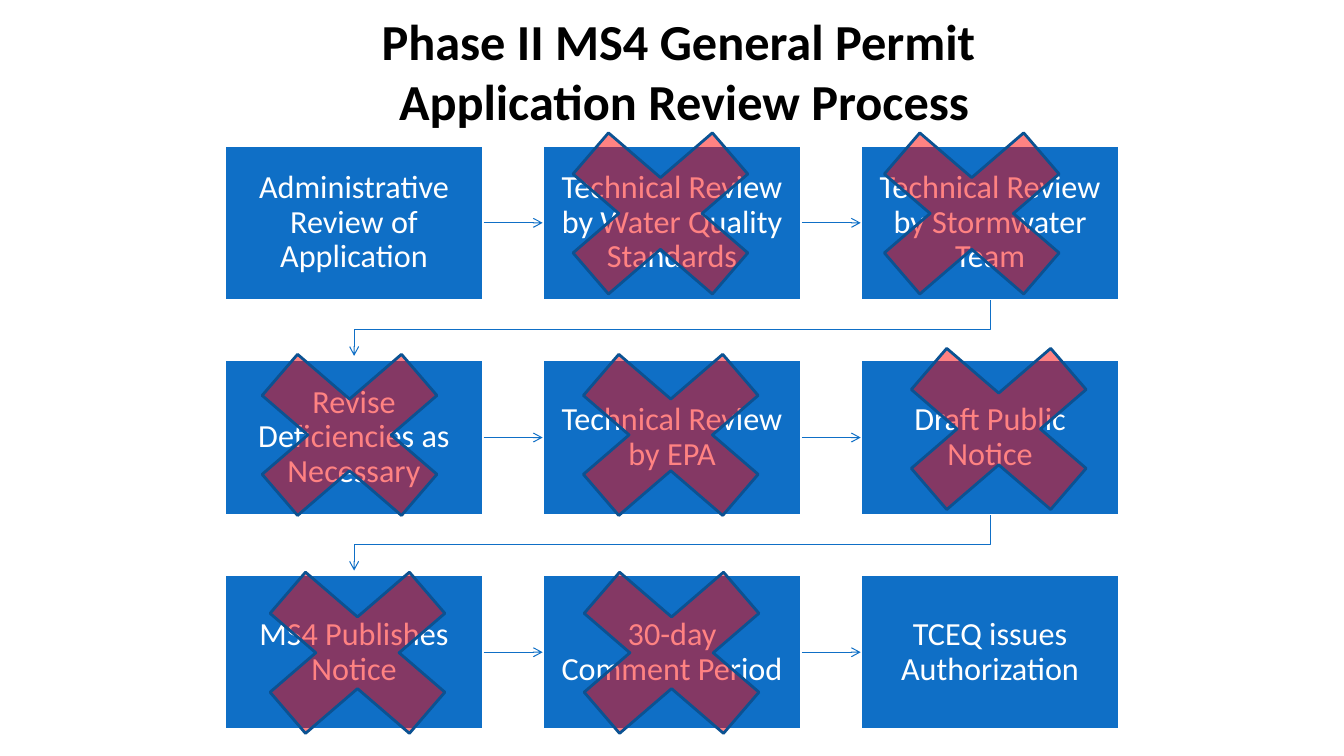
import pptx
import pptx.dml.color
import pptx.enum.shapes
import pptx.enum.text
import pptx.oxml
import pptx.oxml.ns
import pptx.util
from pptx.util import Cm

BLACK = pptx.dml.color.RGBColor(0x00, 0x00, 0x00)
WHITE = pptx.dml.color.RGBColor(0xFF, 0xFF, 0xFF)
BLUE = pptx.dml.color.RGBColor(0x0F, 0x6F, 0xC6)
DARK_BLUE = pptx.dml.color.RGBColor(0x0B, 0x52, 0x92)
RED = pptx.dml.color.RGBColor(0xFF, 0x00, 0x00)
FONT = "Calibri"
COLUMNS = 3
STEP_WIDTH, STEP_HEIGHT = Cm(6.53), Cm(3.91)
CROSS_WIDTH, CROSS_HEIGHT = Cm(6.76), Cm(5.82)

# Each step: wording, and the offset in cm of its cross from the step's corner
STEPS = [
    ("Administrative Review of Application", None),
    ("Technical Review by Water Quality Standards", (-0.41, -1.19)),
    ("Technical Review by Stormwater Team", (-0.58, -1.19)),
    ("Revise Deficiencies as Necessary", (-0.23, -1.02)),
    ("Technical Review by EPA", (-0.15, -1.02)),
    ("Draft Public Notice", (0.1, -1.17)),
    ("MS4 Publishes Notice", (-0.03, -0.94)),
    ("30-day Comment Period", (-0.13, -0.94)),
    ("TCEQ issues Authorization", None),
]


def add_xml(parent, tag, attributes=""):
    namespace = pptx.oxml.ns.nsdecls("a")
    parent.append(pptx.oxml.parse_xml(f"<a:{tag} {namespace} {attributes}/>"))


def format_arrow(arrow):
    arrow.line.color.rgb = BLUE
    arrow.line.width = pptx.util.Pt(0.75)
    add_xml(arrow.line._get_or_add_ln(), "tailEnd", 'type="arrow"')


def add_run(paragraph, text, size, color, bold=False):
    run = paragraph.add_run()
    run.text = text
    run.font.name = FONT
    run.font.size = pptx.util.Pt(size)
    run.font.color.rgb = color
    run.font.bold = bold


def add_title(slide, left, top, width, height):
    title = slide.shapes.title
    title.left, title.top, title.width, title.height = left, top, width, height
    frame = title.text_frame
    frame.auto_size = pptx.enum.text.MSO_AUTO_SIZE.NONE
    frame.vertical_anchor = pptx.enum.text.MSO_ANCHOR.MIDDLE
    paragraph = frame.paragraphs[0]
    paragraph.alignment = pptx.enum.text.PP_ALIGN.CENTER
    add_run(paragraph, "Phase II MS4 General Permit ", 36, BLACK, True)
    paragraph.add_line_break()
    add_run(paragraph, "Application Review Process", 36, BLACK, True)


def add_step(slide, left, top, text):
    step = slide.shapes.add_shape(
        pptx.enum.shapes.MSO_SHAPE.RECTANGLE, left, top, STEP_WIDTH, STEP_HEIGHT)
    step.shadow.inherit = False
    step.fill.solid()
    step.fill.fore_color.rgb = BLUE
    step.line.color.rgb = WHITE
    step.line.width = pptx.util.Pt(2)
    frame = step.text_frame
    frame.word_wrap = True
    frame.vertical_anchor = pptx.enum.text.MSO_ANCHOR.MIDDLE
    frame.margin_left = frame.margin_right = Cm(0.45)
    frame.margin_top = frame.margin_bottom = Cm(0.45)
    paragraph = frame.paragraphs[0]
    paragraph.alignment = pptx.enum.text.PP_ALIGN.CENTER
    paragraph.line_spacing = 0.9
    add_run(paragraph, text, 23, WHITE)
    return step


def add_straight_arrow(slide, start, end):
    arrow = slide.shapes.add_connector(
        pptx.enum.shapes.MSO_CONNECTOR.STRAIGHT, 0, 0, 0, 0)
    arrow.begin_connect(start, 3)
    arrow.end_connect(end, 1)
    format_arrow(arrow)
    add_xml(arrow._element.spPr, "effectLst")


def add_turning_arrow(slide, start, end):
    start_x = start.left + start.width // 2
    start_y = start.top + start.height
    end_x = end.left + end.width // 2
    turn_y = start_y + Cm(0.74)
    builder = slide.shapes.build_freeform(start_x, start_y)
    builder.add_line_segments(
        [(start_x, turn_y), (end_x, turn_y), (end_x, end.top - Cm(0.1))], close=False)
    arrow = builder.convert_to_shape()
    arrow.shadow.inherit = False
    arrow.fill.background()
    format_arrow(arrow)


def add_cross(slide, left, top):
    cross = slide.shapes.add_shape(
        pptx.enum.shapes.MSO_SHAPE.MATH_MULTIPLY, left, top, CROSS_WIDTH, CROSS_HEIGHT)
    cross.shadow.inherit = False
    cross.fill.solid()
    cross.fill.fore_color.rgb = RED
    color = cross._element.spPr.find(".//" + pptx.oxml.ns.qn("a:srgbClr"))
    add_xml(color, "alpha", 'val="49000"')
    cross.line.color.rgb = DARK_BLUE
    cross.line.width = pptx.util.Pt(2)


def add_process(slide, left, top, width, height):
    column_pitch = (width - STEP_WIDTH) // (COLUMNS - 1)
    row_pitch = (height - STEP_HEIGHT) // (len(STEPS) // COLUMNS - 1)

    # Steps, row by row
    boxes = []
    for index, (text, _) in enumerate(STEPS):
        row, column = divmod(index, COLUMNS)
        boxes.append(add_step(
            slide, left + column * column_pitch, top + row * row_pitch, text))

    # Arrows from each step to the next
    for index, (start, end) in enumerate(zip(boxes, boxes[1:]), start=1):
        if index % COLUMNS:
            add_straight_arrow(slide, start, end)
        else:
            add_turning_arrow(slide, start, end)

    # Crosses over the steps that no longer apply
    for box, (_, offset) in zip(boxes, STEPS):
        if offset:
            add_cross(slide, box.left + Cm(offset[0]), box.top + Cm(offset[1]))


def main():
    presentation = pptx.Presentation()
    presentation.slide_width = Cm(33.87)
    presentation.slide_height = Cm(19.05)
    slide = presentation.slides.add_slide(presentation.slide_layouts[5])
    add_title(slide, Cm(2.54), Cm(0.5), Cm(29.41), Cm(2.54))
    add_process(slide, Cm(5.66), Cm(3.66), Cm(22.56), Cm(14.73))
    presentation.save("out.pptx")


if __name__ == "__main__":
    main()
